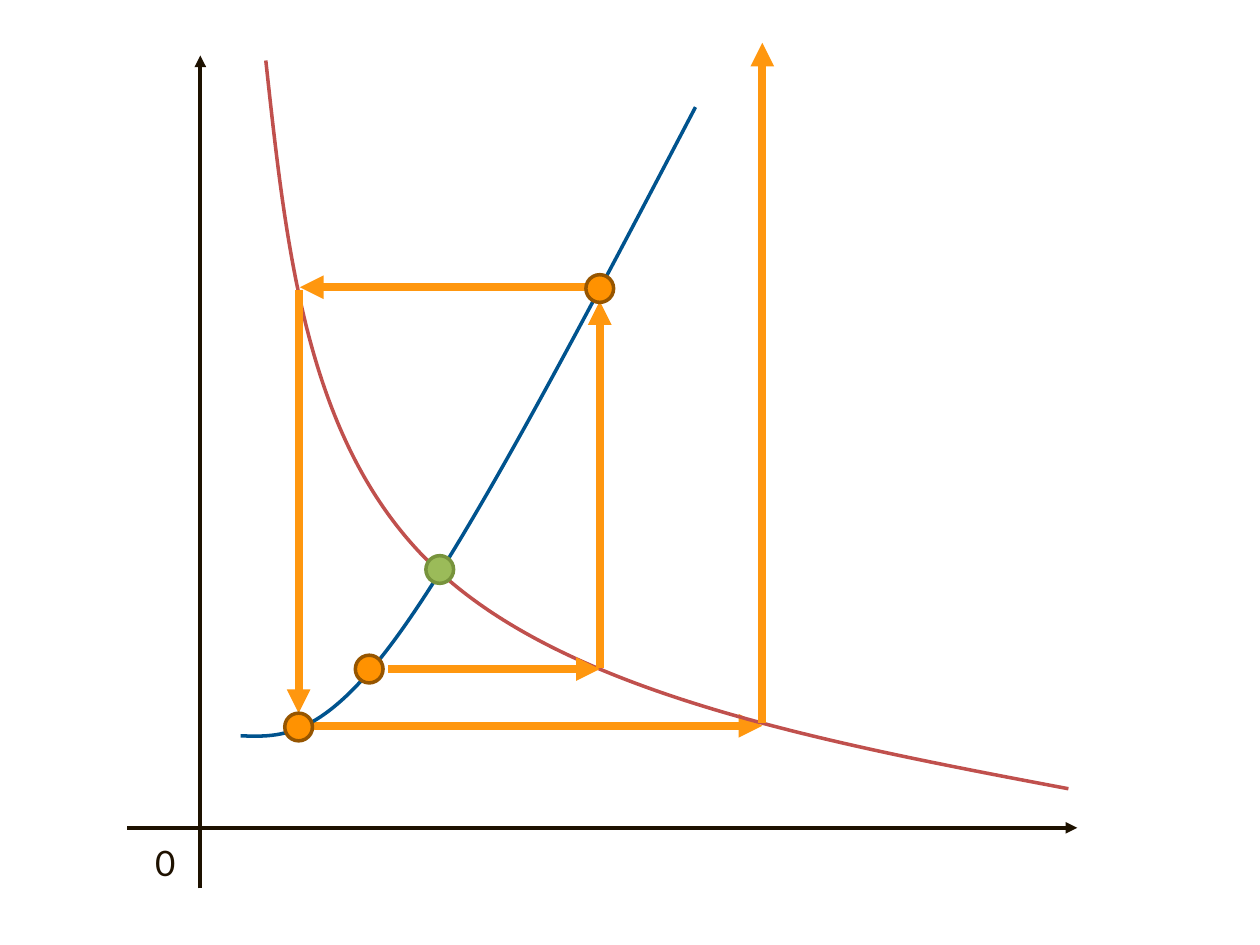
from typing import NamedTuple

import pptx
import pptx.dml.color
import pptx.enum.shapes
import pptx.enum.text
import pptx.oxml
import pptx.oxml.ns
import pptx.util

COLS, ROWS = 100, 75  # slide grid, ten cells to the inch
ORANGE, BLACK, RED, BLUE = "FF970F", "1D1100", "C0504D", "00538E"
DOT_SIZE = 2.2

prs = pptx.Presentation()
prs.slide_width = pptx.util.Inches(10)
prs.slide_height = pptx.util.Inches(7.5)
s = prs.slides.add_slide(prs.slide_layouts[6])


class Point(NamedTuple):
    col: float
    row: float


class Arrow(NamedTuple):
    start: Point
    end: Point
    color: str = ORANGE
    width: float = 4.5


class Dot(NamedTuple):
    center: Point
    fill: str = "FF9201"
    line: str = "965500"


def x(col: float) -> int:
    return round(prs.slide_width * col / COLS)


def y(row: float) -> int:
    return round(prs.slide_height * row / ROWS)


def rgb(color: str) -> pptx.dml.color.RGBColor:
    return pptx.dml.color.RGBColor.from_string(color)


def set_line(shape, color: str, width: float) -> None:
    shape.line.color.rgb = rgb(color)
    shape.line.width = pptx.util.Pt(width)


def draw_arrow(arrow: Arrow) -> None:
    line = s.shapes.add_connector(
        pptx.enum.shapes.MSO_CONNECTOR.STRAIGHT,
        x(arrow.start.col), y(arrow.start.row), x(arrow.end.col), y(arrow.end.row))
    set_line(line, arrow.color, arrow.width)
    ns = pptx.oxml.ns.nsdecls("a")
    line.line._get_or_add_ln().append(
        pptx.oxml.parse_xml(f'<a:tailEnd {ns} type="triangle"/>'))
    line._element.spPr.append(pptx.oxml.parse_xml(f"<a:effectLst {ns}/>"))


def draw_dot(dot: Dot) -> None:
    sp = s.shapes.add_shape(
        pptx.enum.shapes.MSO_SHAPE.OVAL,
        x(dot.center.col - DOT_SIZE / 2), y(dot.center.row - DOT_SIZE / 2),
        x(DOT_SIZE), y(DOT_SIZE))
    sp.shadow.inherit = False
    sp.fill.solid()
    sp.fill.fore_color.rgb = rgb(dot.fill)
    set_line(sp, dot.line, 2)


def draw_curve(points: list[Point], color: str) -> None:
    """Draw a start point followed by cubic triples as one smooth outline."""
    vertices = [(x(p.col), y(p.row)) for p in points]
    builder = s.shapes.build_freeform(*vertices[0])
    builder.add_line_segments(vertices[1:], close=False)
    sp = builder.convert_to_shape()
    sp.shadow.inherit = False
    sp.fill.background()
    set_line(sp, color, 2)
    # Turn every three straight segments into one cubic segment
    qn = pptx.oxml.ns.qn
    segments = list(sp._element.iter(qn("a:lnTo")))
    for i in range(0, len(segments), 3):
        cubic = pptx.oxml.parse_xml(
            f'<a:cubicBezTo {pptx.oxml.ns.nsdecls("a")}/>')
        segments[i].addprevious(cubic)
        for segment in segments[i:i + 3]:
            cubic.append(segment[0])
            segment.getparent().remove(segment)


# Points of the cobweb
left, right, far = 23.7, 47.6, 60.5
top, middle, bottom = 22.8, 53.1, 57.6

# Arrows behind the curves
draw_arrow(Arrow(Point(24.7, bottom), Point(far, bottom)))
draw_arrow(Arrow(Point(46.5, top), Point(23.8, top)))

# Rising curve
draw_curve([Point(19.1, 58.4), Point(22.3, 58.5), Point(25.6, 58.7),
            Point(31.6, 50.4), Point(37.6, 42.1), Point(46.4, 25.3),
            Point(55.2, 8.5)], BLUE)

# Axes and origin label
draw_arrow(Arrow(Point(10.1, 65.7), Point(85.5, 65.7), BLACK, 2.25))
draw_arrow(Arrow(Point(15.9, 70.5), Point(15.9, 4.4), BLACK, 2.25))
tf = s.shapes.add_textbox(x(8.2), y(66.3), x(6.7), y(4.4)).text_frame
tf.word_wrap = True
p = tf.paragraphs[0]
p.text = "0"
p.alignment = pptx.enum.text.PP_ALIGN.RIGHT
p.font.name = "Lato"
p.font.size = pptx.util.Pt(20)
p.font.color.rgb = rgb("1E1100")

# Falling curve
draw_curve([Point(21.1, 4.8), Point(22.8, 20.4), Point(24.4, 35.9),
            Point(35, 45.5), Point(45.6, 55.1), Point(65.2, 58.9),
            Point(84.8, 62.6)], RED)

# Arrows in front of the curves
for arrow in (
    Arrow(Point(30.8, middle), Point(right, middle)),
    Arrow(Point(right, 53), Point(right, 23.9)),
    Arrow(Point(left, 23), Point(left, 56.6)),
    Arrow(Point(far, 57.4), Point(far, 3.4)),
):
    draw_arrow(arrow)

# Steps on the rising curve and the crossing point
for dot in (
    Dot(Point(right, 22.9)),
    Dot(Point(29.3, middle)),
    Dot(Point(34.9, 45.2), "9BBB59", "77933C"),
    Dot(Point(left, 57.7)),
):
    draw_dot(dot)

prs.save("out.pptx")
